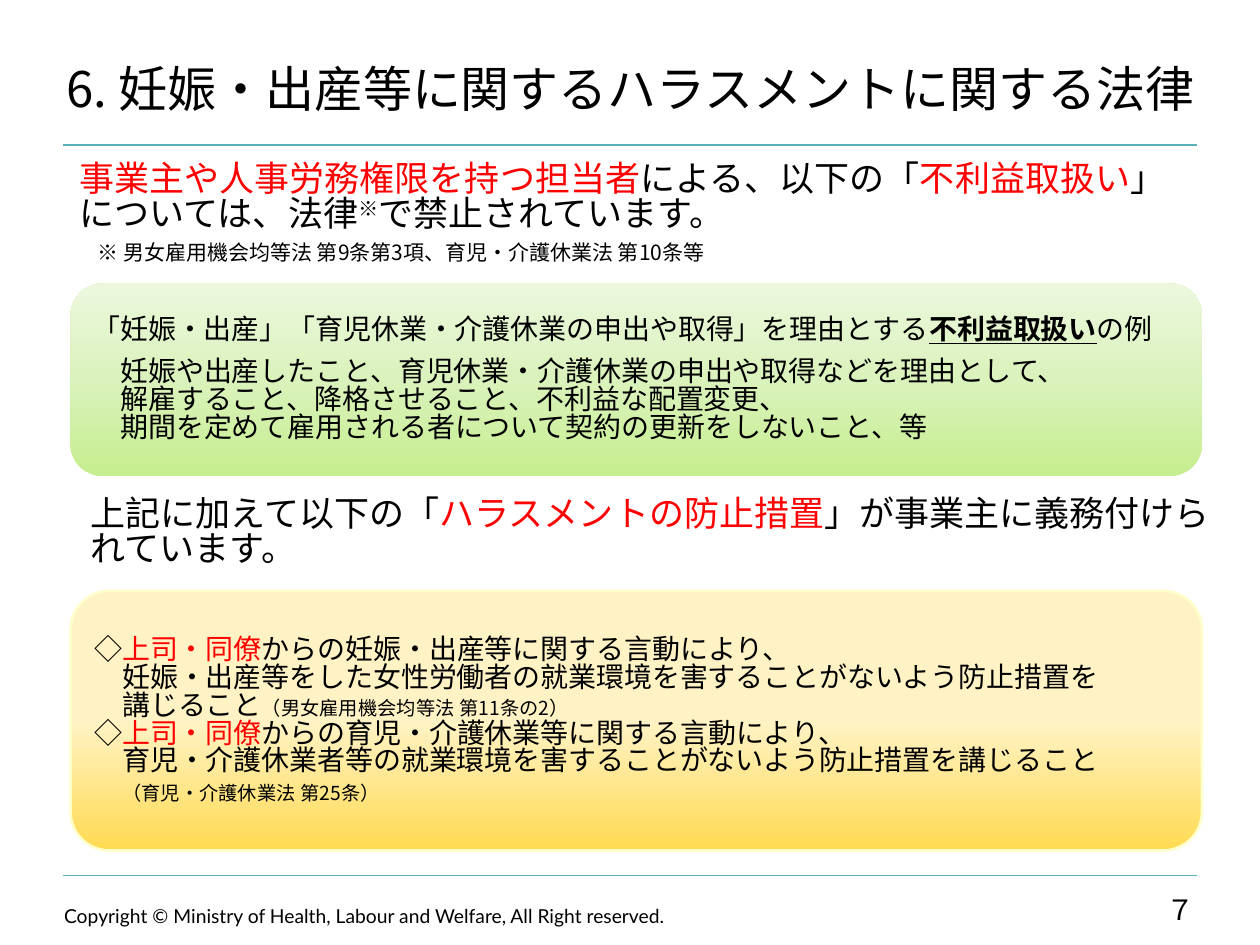
from copy import deepcopy
from pptx import Presentation
from pptx.dml.color import RGBColor
from pptx.enum.shapes import MSO_CONNECTOR, MSO_SHAPE
from pptx.enum.text import MSO_ANCHOR, MSO_AUTO_SIZE, PP_ALIGN
from pptx.oxml.ns import qn
from pptx.util import Inches, Pt

LINE = MSO_CONNECTOR.STRAIGHT
ROUND = MSO_SHAPE.ROUNDED_RECTANGLE
TOP, MID, LOW = MSO_ANCHOR.TOP, MSO_ANCHOR.MIDDLE, MSO_ANCHOR.BOTTOM
LEFT, MIDDLE = PP_ALIGN.LEFT, PP_ALIGN.CENTER
FIXED = MSO_AUTO_SIZE.NONE
FONT, LATIN = "Noto Sans CJK JP", "Lato"
RED, BLACK, TEAL = "FF0000", "000000", "59B0B9"
LEAD = 0.83
EDGE, SPAN = 0.56, 8.98


def tint(code):
    """Turn a hex string into a colour."""
    return RGBColor.from_string(code)


def put(shape, box):
    """Place a shape at left, top, width, height in inches."""
    shape.left, shape.top, shape.width, shape.height = map(Inches, box)


def style(run, size, color=BLACK, strong=False, lift=False, font=FONT):
    """Format one run for Latin and East Asian text."""
    face = run.font
    face.size, face.name, face.bold = Pt(size), font, strong
    face.underline = strong
    face.color.rgb = tint(color)
    props = run._r.get_or_add_rPr()
    props.get_or_add_latin().addnext(props.makeelement(qn("a:ea"), {"typeface": font}))
    if lift:
        props.set("baseline", "30000")


def para(item, parts, size, indent=0, before=0, lead=LEAD, align=LEFT, font=FONT):
    """Fill a paragraph from strings or (text, options) pairs."""
    for part in parts:
        text, look = (part, {}) if isinstance(part, str) else part
        run = item.add_run()
        run.text = text
        style(run, **{"size": size, "font": font, **look})
    item.alignment, item.line_spacing = align, lead
    item.space_before, item.space_after = Pt(before), Pt(0)
    props = item._p.get_or_add_pPr()
    props.set("marL", str(Pt(indent)))
    props.set("indent", "0")
    props.append(props.makeelement(qn("a:buNone"), {}))


def write(shape, rows, anchor=TOP):
    """Write rows of (parts, options) into a shape."""
    frame = shape.text_frame
    frame.word_wrap, frame.auto_size = True, FIXED
    frame.vertical_anchor = anchor
    for count, (parts, look) in enumerate(rows):
        item = frame.add_paragraph() if count else frame.paragraphs[0]
        para(item, parts, **look)


def note(slide, box, rows, anchor=TOP):
    """Add a text box."""
    shape = slide.shapes.add_textbox(*map(Inches, box))
    write(shape, rows, anchor)


def rule(slide, top):
    """Draw a thin line across the slide."""
    line = slide.shapes.add_connector(LINE, Inches(0.5), Inches(top), Inches(9.5), Inches(top))
    line.line.color.rgb, line.line.width = tint(TEAL), Pt(0.75)
    props = line._element.spPr
    props.append(props.makeelement(qn("a:effectLst"), {}))


def panel(slide, top, height, colors, rows, edge=None, bend=0.167):
    """Add a rounded panel shaded from bottom to top."""
    shape = slide.shapes.add_shape(ROUND, *map(Inches, (EDGE, top, SPAN, height)))
    shape.shadow.inherit = False
    shape.adjustments[0] = bend
    fill = shape.fill
    fill.gradient()
    fill.gradient_angle = 90
    stops = shape._element.spPr.find(qn("a:gradFill")).find(qn("a:gsLst"))
    stops.insert(1, deepcopy(stops[0]))
    for stop, color, place in zip(fill.gradient_stops, colors, (0, 0.5, 1)):
        stop.color.rgb, stop.position = tint(color), place
    if edge:
        shape.line.color.rgb, shape.line.width = tint(edge), Pt(1.5)
    else:
        shape.line.fill.background()
    write(shape, rows, MID)


def main():
    """Build the slide."""
    deck = Presentation()
    deck.slide_width, deck.slide_height = Inches(10), Inches(7.5)
    slide = deck.slides.add_slide(deck.slide_layouts[1])
    red = {"color": RED}
    big, text, deep = {"size": 20}, {"size": 16}, {"size": 16, "indent": 16}

    for top in (6.95, 1.15):
        rule(slide, top)
    note(slide, (0.41, 7.13, 8.42, 0.29), [
        (["Copyright © Ministry of Health, Labour and Welfare, All Right reserved."],
         {"size": 11, "font": LATIN, "lead": 1})])

    title, body = slide.placeholders
    put(title, (0.43, 0.07, 9.62, 0.91))
    write(title, [(["6. 妊娠・出産等に関するハラスメントに関する法律"], {"size": 28})], LOW)
    put(body, (0.53, 1.25, 9.13, 2.65))
    write(body, [
        ([("事業主や人事労務権限を持つ担当者", red), "による、以下の「",
          ("不利益取扱い", red), "」　については、法律", ("※", {"lift": True}),
          "で禁止されています。"], big),
        (["※ 男女雇用機会均等法 第9条第3項、育児・介護休業法 第10条等"],
         {"size": 12, "indent": 10.5, "before": 6})])

    panel(slide, 2.25, 1.53, ("C6EE8F", "DAF2BC", "ECF8DE"), [
        (["「妊娠・出産」「育児休業・介護休業の申出や取得」を理由とする",
          ("不利益取扱い", {"strong": True}), "の例"], text),
        (["妊娠や出産したこと、育児休業・介護休業の申出や取得などを理由として、"],
         {**deep, "before": 8.4}),
        (["解雇すること、降格させること、不利益な配置変更、"], deep),
        (["期間を定めて雇用される者について契約の更新をしないこと、等"], deep)])

    note(slide, (0.62, 3.91, 9.13, 2.65), [
        (["上記に加えて以下の「", ("ハラスメントの防止措置", red),
          "」が事業主に義務付けられています。"], {**big, "before": 6})])

    who = ["◇", ("上司・同僚", red)]
    small = {"size": 11}
    panel(slide, 4.69, 2.06, ("FFDA52", "FFF3C5", "FFF3C5"), [
        (who + ["からの妊娠・出産等に関する言動により、"], text),
        (["妊娠・出産等をした女性労働者の就業環境を害することがないよう防止措置を"], deep),
        (["講じること", ("（男女雇用機会均等法 第11条の2）", small)], deep),
        (who + ["からの育児・介護休業等に関する言動により、"], text),
        (["育児・介護休業者等の就業環境を害することがないよう防止措置を講じること"], deep),
        ([("（育児・介護休業法 第25条）", small)], {**deep, "lead": 1.2})],
        edge="FFFFCC", bend=0.149)

    note(slide, (8.86, 6.98, 1.02, 0.52),
         [(["７"], {"size": 16, "align": MIDDLE})], MID)
    deck.save("out.pptx")


if __name__ == "__main__":
    main()
